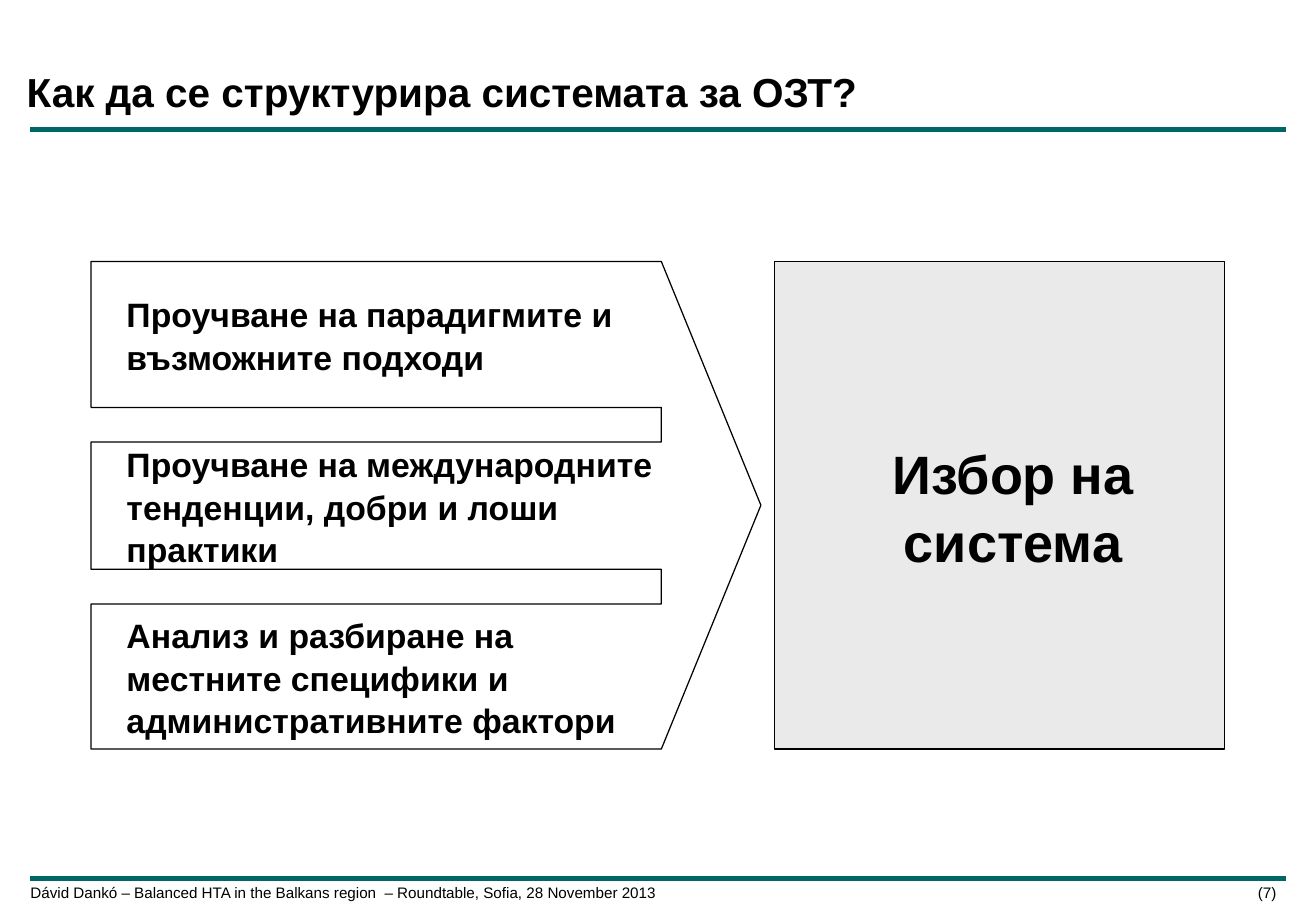
from dataclasses import dataclass

import pptx
import pptx.util
import pptx.dml.color
import pptx.enum.shapes
import pptx.enum.text
import pptx.oxml.ns
from lxml import etree

Pt = pptx.util.Pt
Align = pptx.enum.text.PP_ALIGN
Anchor = pptx.enum.text.MSO_ANCHOR
qn = pptx.oxml.ns.qn


@dataclass(frozen=True)
class Theme:
    font: str = "Arial"
    ink: str = "000000"
    paper: str = "FFFFFF"
    panel: str = "EAEAEA"
    rule: str = "006666"
    footer_size: float = 9
    step_size: float = 20
    title_size: float = 24
    result_size: float = 32
    outline: float = 0.75
    rule_width: float = 3


class SlideBuilder:
    def __init__(self, slide, theme):
        self.slide = slide
        self.theme = theme

    @staticmethod
    def color(value):
        return pptx.dml.color.RGBColor.from_string(value)

    def paint(self, shape, fill):
        shape.shadow.inherit = False
        shape.fill.solid()
        shape.fill.fore_color.rgb = self.color(fill)
        shape.line.color.rgb = self.color(self.theme.ink)
        shape.line.width = Pt(self.theme.outline)

    def text(self, x, y, w, h, content, size, bold=True, align=Align.LEFT,
             anchor=Anchor.MIDDLE, spacing=1.05, pad=0, right_tab=None):
        box = self.slide.shapes.add_textbox(Pt(x), Pt(y), Pt(w), Pt(h))
        frame = box.text_frame
        frame.word_wrap = True
        frame.vertical_anchor = anchor
        frame.margin_left = frame.margin_right = 0
        frame.margin_top = frame.margin_bottom = Pt(pad)
        paragraph = frame.paragraphs[0]
        if right_tab is not None:
            tabs = etree.SubElement(paragraph._p.get_or_add_pPr(), qn("a:tabLst"))
            etree.SubElement(tabs, qn("a:tab"), pos=str(Pt(right_tab)), algn="r")
        paragraph.alignment = align
        paragraph.line_spacing = spacing
        run = paragraph.add_run()
        run.text = content
        run.font.name = self.theme.font
        run.font.size = Pt(size)
        run.font.bold = bold
        run.font.color.rgb = self.color(self.theme.ink)

    def rule(self, left, right, y):
        line = self.slide.shapes.add_connector(
            pptx.enum.shapes.MSO_CONNECTOR.STRAIGHT, Pt(left), Pt(y), Pt(right), Pt(y))
        line.line.color.rgb = self.color(self.theme.rule)
        line.line.width = Pt(self.theme.rule_width)
        etree.SubElement(line._element.spPr, qn("a:effectLst"))

    def outline(self, points):
        start, *rest = [(Pt(x), Pt(y)) for x, y in points]
        builder = self.slide.shapes.build_freeform(*start)
        builder.add_line_segments(rest, close=True)
        self.paint(builder.convert_to_shape(), self.theme.paper)

    def rectangle(self, x, y, w, h, fill):
        shape = self.slide.shapes.add_shape(
            pptx.enum.shapes.MSO_SHAPE.RECTANGLE, Pt(x), Pt(y), Pt(w), Pt(h))
        self.paint(shape, fill)


def main():
    theme = Theme()
    deck = pptx.Presentation()
    deck.slide_width, deck.slide_height = Pt(780), Pt(540)
    page = SlideBuilder(deck.slides.add_slide(deck.slide_layouts[6]), theme)

    # Footer and rules
    page.text(18, 524.8, 746, 10,
              "Dávid Dankó – Balanced HTA in the Balkans region  – "
              "Roundtable, Sofia, 28 November 2013\t(7)",
              theme.footer_size, bold=False, anchor=Anchor.TOP, spacing=0.9,
              right_tab=738.5)
    for rule_y in (77, 521):
        page.rule(18, 762, rule_y)

    # Title
    page.text(15.8, 5.8, 675, 66.2, "Как да се структурира системата за ОЗТ?",
              theme.title_size, anchor=Anchor.BOTTOM, spacing=0.9, pad=3)

    # Three-pronged arrow: top, bottom, line count and wording of each prong
    prongs = [
        (155, 241.5, 2, "Проучване на парадигмите и възможните подходи"),
        (262, 337.5, 3, "Проучване на международните тенденции, добри и лоши практики"),
        (358, 444, 3, "Анализ и разбиране на местните специфики и "
                      "административните фактори"),
    ]
    arrow_left, notch_right, tip_x = 54, 392, 451
    top, bottom = prongs[0][0], prongs[-1][1]
    middle = (top + bottom) / 2
    points = [(notch_right, bottom), (tip_x, middle), (notch_right, top)]
    for (_, above, *_), (below, *_) in zip(prongs, prongs[1:]):
        points += [(arrow_left, above), (notch_right, above),
                   (notch_right, below), (arrow_left, below)]
    points.insert(3, (arrow_left, top))
    points.append((arrow_left, bottom))
    page.outline(points)

    # Prong wording, centred on each prong
    for prong_top, prong_bottom, lines, wording in prongs:
        height = lines * 24.2
        page.text(75, (prong_top + prong_bottom - height) / 2, 321, height,
                  wording, theme.step_size)

    # Result panel
    panel_left, panel_right, result_left, result_height = 459, 726, 475, 78
    page.rectangle(panel_left, top, panel_right - panel_left, bottom - top, theme.panel)
    page.text(result_left, middle - result_height / 2, panel_right - result_left,
              result_height, "Избор на система", theme.result_size, align=Align.CENTER)

    deck.save("out.pptx")


if __name__ == "__main__":
    main()
